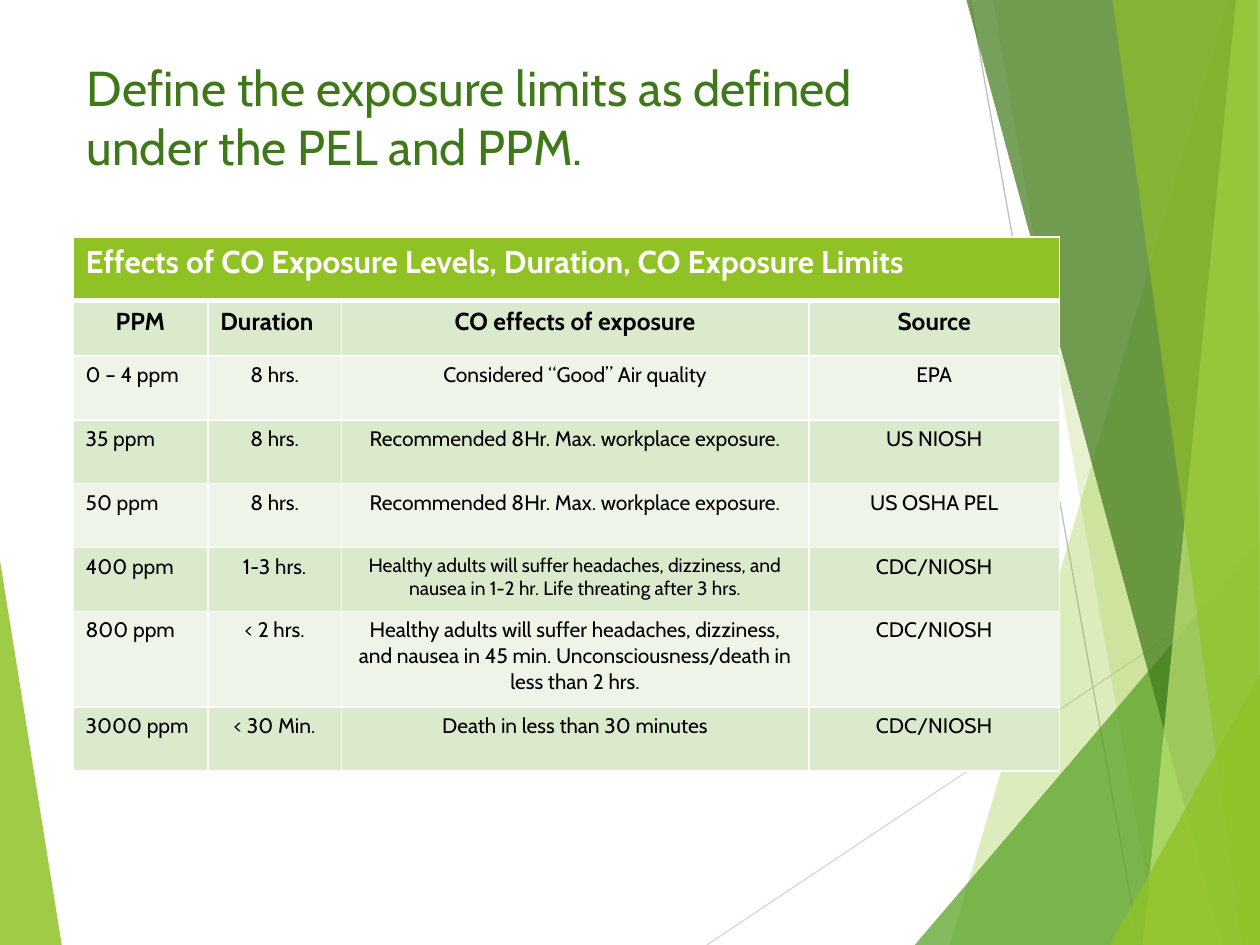
"""Build a slide with a table of carbon monoxide exposure limits."""
import lxml.etree
import pptx
import pptx.dml.color
import pptx.enum.shapes
import pptx.enum.text
import pptx.oxml.ns
import pptx.util

FONT = "Cabin"
LIME, DARK_GREEN, WHITE, BLACK = "90C226", "3F7819", "FFFFFF", "000000"
BANDS = ["EEF4E8", "DBE9CD"]
ALIGN = pptx.enum.text.PP_ALIGN


def paint(target, color):
    """Give a fill a solid colour, or a colour object its value."""
    if hasattr(target, "solid"):
        target.solid()
        target = target.fore_color
    target.rgb = pptx.dml.color.RGBColor.from_string(color)


def add_node(parent, tag, **attributes):
    """Append a DrawingML element and return it."""
    return lxml.etree.SubElement(parent, pptx.oxml.ns.qn(tag), attributes)


presentation = pptx.Presentation()
presentation.slide_width = pptx.util.Inches(10)
presentation.slide_height = pptx.util.Inches(7.5)
column = presentation.slide_width / 10
row = presentation.slide_height / 7.5
slide = presentation.slides.add_slide(presentation.slide_layouts[5])
shapes = slide.shapes

guides = [((5.61, 7.5), (10, 4.57), "D9D9D9"), ((7.7, 0), (9.04, 7.5), "BFBFBF")]
panels = [
    (LIME, 85, [(0, 4.45), (0.49, 7.5), (0, 7.5)]),
    (LIME, 30, [(9.75, 0), (7.54, 7.5), (10, 7.5), (10, 0)]),
    (LIME, 20, [(7.88, 0), (9.19, 7.5), (10, 7.5), (10, 0)]),
    ("54A021", 72, [(7.26, 7.5), (10, 4.29), (10, 7.5)]),
    (DARK_GREEN, 70, [(7.67, 0), (9.7, 7.5), (10, 7.5), (10, 0)]),
    ("C0E474", 70, [(9.81, 0), (9.07, 7.5), (10, 7.5), (10, 0)]),
    (LIME, 65, [(8.83, 0), (9.86, 7.5), (10, 7.5), (9.98, 0)]),
    (LIME, 80, [(8.81, 7.5), (10, 5.35), (10, 7.5)]),
]
for index, (color, alpha, corners) in enumerate(panels):
    points = [(x * 100, y * 100) for x, y in corners]
    builder = shapes.build_freeform(*points[0], scale=(column / 100, row / 100))
    builder.add_line_segments(points[1:], close=True)
    panel = builder.convert_to_shape()
    panel.shadow.inherit = False
    paint(panel.fill, color)
    tint = panel.element.spPr.find(".//" + pptx.oxml.ns.qn("a:srgbClr"))
    add_node(tint, "a:alpha", val=str(alpha * 1000))
    panel.line.fill.background()
    if index == 0:
        for start, end, line_color in guides:
            guide = shapes.add_connector(
                pptx.enum.shapes.MSO_CONNECTOR.STRAIGHT,
                int(start[0] * column), int(start[1] * row),
                int(end[0] * column), int(end[1] * row))
            paint(guide.line.color, line_color)
            guide.line.width = pptx.util.Pt(0.75)
            add_node(guide.element.spPr, "a:effectLst")

title = shapes.title
panel.element.addnext(title.element)
title.left, title.top = int(0.59 * column), int(0.41 * row)
title.width, title.height = int(7.09 * column), int(1.1 * row)
title_frame = title.text_frame
title_frame.text = "Define the exposure limits as defined under the PEL and PPM."
title_frame.word_wrap = True
title_frame.auto_size = pptx.enum.text.MSO_AUTO_SIZE.NONE
title_frame.vertical_anchor = pptx.enum.text.MSO_ANCHOR.TOP
paragraph = title_frame.paragraphs[0]
paragraph.alignment = ALIGN.LEFT
font = paragraph.runs[0].font
font.name, font.size = FONT, pptx.util.Pt(28)
paint(font.color, DARK_GREEN)

workplace = "Recommended 8Hr. Max. workplace exposure."
symptoms = "Healthy adults will suffer headaches, dizziness, and nausea in "
records = [
    ["Effects of CO Exposure Levels, Duration, CO Exposure Limits", "", "", ""],
    ["PPM", "Duration", "CO effects of exposure", "Source"],
    ["0 – 4 ppm", "8 hrs.", "Considered “Good” Air quality", "EPA"],
    ["35 ppm", "8 hrs.", workplace, "US NIOSH"],
    ["50 ppm", "8 hrs.", workplace, "US OSHA PEL"],
    ["400 ppm", "1-3 hrs.", symptoms + "1-2 hr. Life threating after 3 hrs.", "CDC/NIOSH"],
    ["800 ppm", "< 2 hrs.",
     symptoms + "45 min. Unconsciousness/death in less than 2 hrs.", "CDC/NIOSH"],
    ["3000 ppm", "< 30 Min.", "Death in less than 30 minutes", "CDC/NIOSH"],
]
widths = [1.07, 1.06, 3.71, 1.99]
table_height, label_height, tall_height = 4.24, 0.44, 0.76
regular_height = (table_height - label_height - tall_height) / 6
heights = [regular_height] * len(records)
heights[1], heights[6] = label_height, tall_height
table = shapes.add_table(
    len(records), len(widths), int(0.58 * column), int(1.88 * row),
    int(sum(widths) * column), int(table_height * row)).table
for table_column, width in zip(table.columns, widths):
    table_column.width = int(width * column)
for table_row, height in zip(table.rows, heights):
    table_row.height = int(height * row)
table.cell(0, 0).merge(table.cell(0, 3))

left_cells = {(1, 1)} | {(r, 0) for r in range(len(records)) if r != 1}
for r, record in enumerate(records):
    for c, text in enumerate(record):
        cell = table.cell(r, c)
        properties = cell._tc.get_or_add_tcPr()
        for side in "LRTB":
            thick = (r, side) in [(0, "B"), (1, "T")]
            border = add_node(properties, "a:ln" + side, w=str(pptx.util.Pt(3 if thick else 1)))
            add_node(add_node(border, "a:solidFill"), "a:srgbClr", val=WHITE)
        paint(cell.fill, BANDS[r % 2] if r else LIME)
        if not text:
            continue
        cell.text_frame.text = text
        paragraph = cell.text_frame.paragraphs[0]
        paragraph.alignment = ALIGN.LEFT if (r, c) in left_cells else ALIGN.CENTER
        font = paragraph.runs[0].font
        size = 11 if (r, c) == (5, 2) else {0: 18, 1: 14}.get(r, 12)
        font.name, font.size, font.bold = FONT, pptx.util.Pt(size), r < 2
        paint(font.color, BLACK if r else WHITE)

presentation.save("out.pptx")
